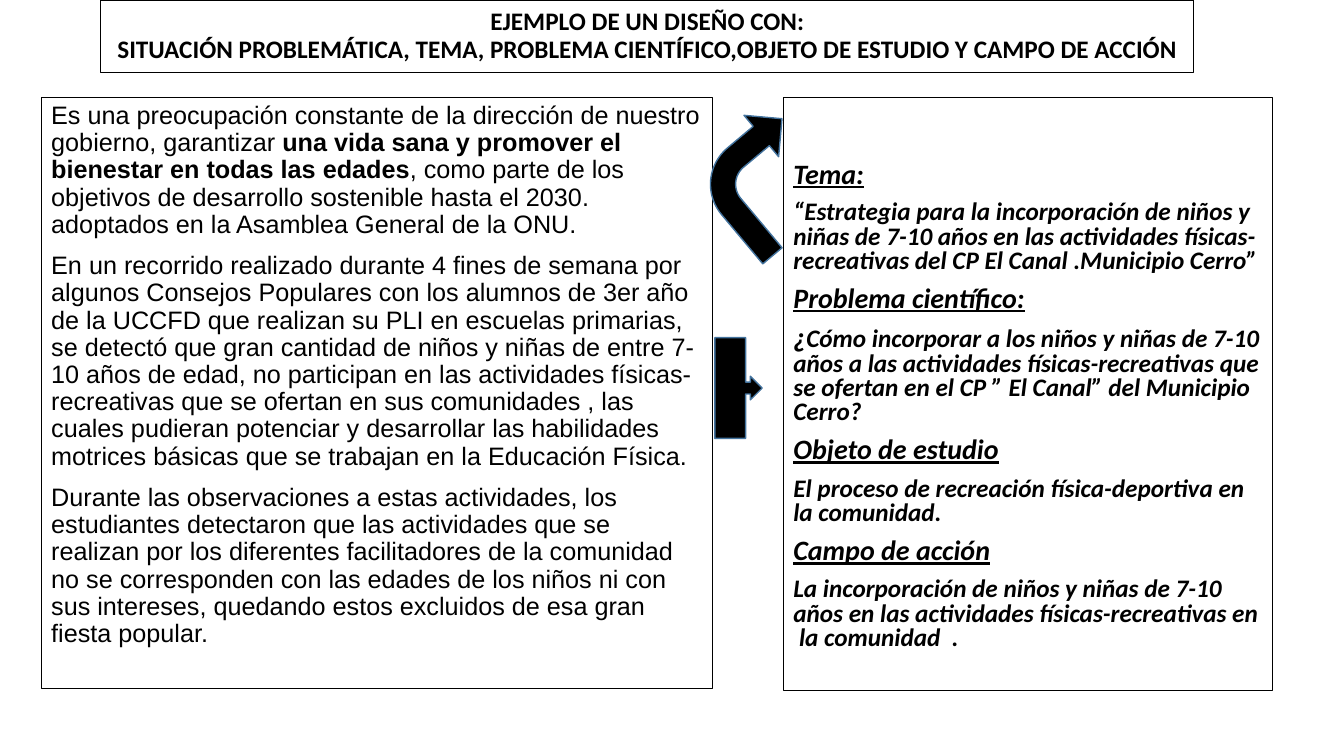
import pptx
import pptx.util
import pptx.dml.color
import pptx.enum.shapes
import pptx.enum.text

Inches, Pt = pptx.util.Inches, pptx.util.Pt
RGB = pptx.dml.color.RGBColor
Kind = pptx.enum.shapes.MSO_SHAPE
Align = pptx.enum.text.PP_ALIGN
Anchor = pptx.enum.text.MSO_ANCHOR

BLACK = RGB(0, 0, 0)
EDGE = RGB(0x43, 0x73, 0x9E)

# Run formats
PLAIN = {"name": "Arial", "size": Pt(18), "bold": False}
BOLD = {**PLAIN, "bold": True}
TITLE = {"name": "Calibri", "size": Pt(18), "bold": True}
BODY = {**TITLE, "italic": True, "underline": False}
LARGE = {**BODY, "size": Pt(20)}
HEAD = {**LARGE, "underline": True}

# Content: each paragraph is a list of (text, format) runs
title = [[("EJEMPLO DE UN DISEÑO CON:\vSITUACIÓN PROBLEMÁTICA, TEMA, PROBLEMA CIENTÍFICO,"
           "OBJETO DE ESTUDIO Y CAMPO DE ACCIÓN", TITLE)]]
problem = [
    [("Es una preocupación constante de la dirección de nuestro gobierno, garantizar ", PLAIN),
     ("una vida sana y promover el bienestar en todas las edades", BOLD),
     (", como parte de los objetivos de desarrollo sostenible hasta el 2030.  "
      "adoptados en la Asamblea General de la ONU.", PLAIN)],
    [("En un recorrido realizado durante 4 fines de semana por algunos Consejos Populares "
      "con los alumnos de 3er año de la UCCFD que realizan su PLI en escuelas primarias, "
      "se detectó que gran cantidad de niños y niñas de entre 7-10 años de edad, no "
      "participan en las actividades físicas-recreativas que se ofertan en sus comunidades "
      ", las cuales pudieran potenciar y desarrollar las habilidades motrices básicas que "
      "se trabajan en la Educación Física.", PLAIN)],
    [("Durante las observaciones a estas actividades, los estudiantes detectaron que las "
      "actividades que se realizan por los diferentes facilitadores de la comunidad no se "
      "corresponden con las edades de los niños ni con sus intereses, quedando estos "
      "excluidos de esa gran fiesta popular.", PLAIN)],
]
design = [
    [("Tema:", HEAD)],
    [("“Estrategia para la incorporación de niños y niñas de 7-10 años en las actividades "
      "físicas-recreativas del CP El Canal .Municipio Cerro”", BODY)],
    [("Problema científico:", HEAD)],
    [("¿", LARGE),
     ("Cómo incorporar a los niños y niñas de 7-10 años a las actividades "
      "físicas-recreativas que se ofertan en el CP ” El Canal” del Municipio Cerro?", BODY)],
    [("Objeto de estudio", HEAD)],
    [("El proceso de recreación física-deportiva en la comunidad.", BODY)],
    [("Campo de acción", HEAD)],
    [("La incorporación de niños y niñas de 7-10 años en las actividades "
      "físicas-recreativas en  la comunidad  .", BODY)],
]

# Places: left, top, width, height in inches
TOP = 0.97
PLACES = {
    "title": (1, 0, 10.84, 0.72),
    "problem": (0.41, TOP, 6.66, 5.86),
    "design": (7.77, TOP, 4.85, 5.88),
}
ARROWS = [
    (Kind.RIGHT_ARROW_CALLOUT, (7.09, 3.35, 0.47, 1), 0, ()),
    (Kind.BENT_ARROW, (7.04, 1.17, 1.07, 1.25), 320.1, (0.233, 0.25, 0.25, 0.438)),
]


def put(obj, vals):
    for key, val in vals.items():
        setattr(obj, key, val)


def place(box):
    return dict(zip(("left", "top", "width", "height"), map(Inches, box)))


def fill_box(shape, box, paras, frame, form):
    """Move a framed text shape and write its paragraphs."""
    put(shape, place(box))
    shape.line.color.rgb = BLACK
    shape.line.width = Pt(0.75)
    text = shape.text_frame
    put(text, {"word_wrap": True, "auto_size": pptx.enum.text.MSO_AUTO_SIZE.NONE, **frame})
    for i, runs in enumerate(paras):
        para = text.paragraphs[0] if i == 0 else text.add_paragraph()
        put(para, form)
        for words, font in runs:
            for j, line in enumerate(words.split("\v")):
                if j:
                    para.add_line_break()
                run = para.add_run()
                run.text = line
                put(run.font, font)
                run.font.color.rgb = BLACK


deck = pptx.Presentation()
put(deck, {"slide_width": Inches(13.33), "slide_height": Inches(7.5)})
slide = deck.slides.add_slide(deck.slide_layouts[5])
shapes = slide.shapes

# Title and the two text panels
fill_box(shapes.title, PLACES["title"], title, {"vertical_anchor": Anchor.MIDDLE},
         {"alignment": Align.CENTER, "line_spacing": 0.9, "space_before": Pt(0)})
panels = [
    ("problem", problem, 0.05, {"line_spacing": 0.9, "space_before": Pt(10)}),
    ("design", design, 0.67, {"line_spacing": 0.8, "space_before": Pt(9)}),
]
for name, paras, inset, form in panels:
    panel = shapes.add_textbox(0, 0, 0, 0)
    frame = {"vertical_anchor": Anchor.TOP, "margin_top": Inches(inset)}
    fill_box(panel, PLACES[name], paras, frame, form)
panel.text_frame.paragraphs[0].line_spacing = 0.7

# Arrows between the panels
for kind, box, turn, adjust in ARROWS:
    arrow = shapes.add_shape(kind, *place(box).values())
    arrow.rotation = turn
    arrow.shadow.inherit = False
    arrow.fill.solid()
    arrow.fill.fore_color.rgb = BLACK
    arrow.line.color.rgb = EDGE
    arrow.line.width = Pt(1)
    for i, val in enumerate(adjust):
        arrow.adjustments[i] = val

deck.save("out.pptx")
